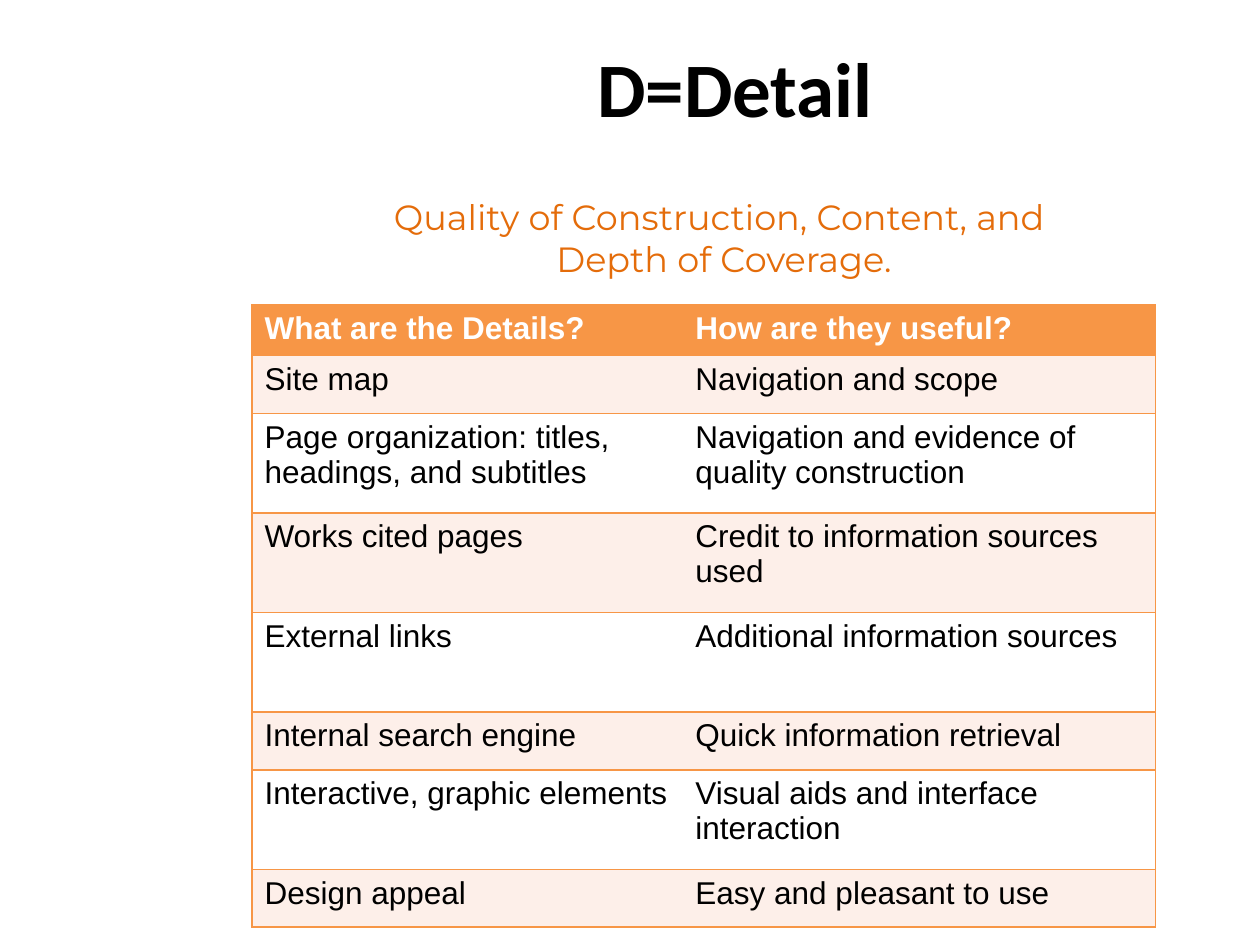
from dataclasses import dataclass

from lxml.etree import SubElement
from pptx import Presentation
from pptx.dml.color import RGBColor
from pptx.enum.text import MSO_ANCHOR, PP_ALIGN
from pptx.oxml.ns import qn
from pptx.util import Inches, Pt


@dataclass(frozen=True)
class Theme:
    black: str = "000000"
    white: str = "FFFFFF"
    orange: str = "F79646"
    dark_orange: str = "E46C0A"
    band: str = "FDEFE9"
    title_size: int = 44
    subtitle_size: int = 20
    table_size: int = 18


THEME = Theme()


def add_run(paragraph, text, font_name, size, color, bold=False):
    run = paragraph.add_run()
    run.text = text
    run.font.name = font_name
    run.font.size = Pt(size)
    run.font.bold = bold
    run.font.color.rgb = RGBColor.from_string(color)


def set_borders(cell, ruled_sides):
    """Rule the given sides (L, R, T, B) and leave the others without a line."""
    properties = cell._tc.get_or_add_tcPr()
    for side in "LRTB":
        border = SubElement(properties, qn(f"a:ln{side}"), w=str(Pt(1)))
        if side in ruled_sides:
            fill = SubElement(border, qn("a:solidFill"))
            SubElement(fill, qn("a:srgbClr"), val=THEME.orange)
        else:
            SubElement(border, qn("a:noFill"))


prs = Presentation()
prs.slide_width, prs.slide_height = Inches(10), Inches(7.5)
slide = prs.slides.add_slide(prs.slide_layouts[6])

# Title
title = slide.shapes.add_textbox(Inches(2.17), Inches(0.25), Inches(7.33), Inches(0.87)).text_frame
title.word_wrap = True
title.vertical_anchor = MSO_ANCHOR.MIDDLE
title.paragraphs[0].alignment = PP_ALIGN.CENTER
add_run(title.paragraphs[0], "D=Detail", "Calibri", THEME.title_size, THEME.black, bold=True)

# Details and their uses
details = [
    ("What are the Details?", "How are they useful?", 0.38),
    ("Site map", "Navigation and scope", 0.46),
    ("Page organization: titles, headings, and subtitles",
     "Navigation and evidence of quality construction", 0.79),
    ("Works cited pages", "Credit to information sources used", 0.79),
    ("External links", "Additional information sources", 0.79),
    ("Internal search engine", "Quick information retrieval", 0.46),
    ("Interactive, graphic elements", "Visual aids and interface interaction", 0.79),
    ("Design appeal", "Easy and pleasant to use", 0.46),
]
table_height = sum(height for *_, height in details)
table = slide.shapes.add_table(
    len(details), 2, Inches(2), Inches(2.42), Inches(7.17), Inches(table_height)).table
table.columns[0].width = Inches(3.42)
table.columns[1].width = Inches(3.75)

for row_index, (*texts, height) in enumerate(details):
    table.rows[row_index].height = Inches(height)
    is_header = row_index == 0
    if is_header:
        row_fill = THEME.orange
    else:
        row_fill = THEME.band if row_index % 2 else THEME.white
    text_color = THEME.white if is_header else THEME.black
    for column_index, text in enumerate(texts):
        cell = table.cell(row_index, column_index)
        set_borders(cell, "TB" + "LR"[column_index])
        cell.fill.solid()
        cell.fill.fore_color.rgb = RGBColor.from_string(row_fill)
        add_run(cell.text_frame.paragraphs[0], text, "Arial",
                THEME.table_size, text_color, bold=is_header)

# Subtitle
subtitle = slide.shapes.add_textbox(Inches(1.92), Inches(1.5), Inches(7.58), Inches(0.77)).text_frame
subtitle.word_wrap = True
for index, line in enumerate(["Quality of Construction, Content, and", " Depth of Coverage."]):
    paragraph = subtitle.add_paragraph() if index else subtitle.paragraphs[0]
    paragraph.alignment = PP_ALIGN.CENTER
    add_run(paragraph, line, "Montserrat", THEME.subtitle_size, THEME.dark_orange)

prs.save("out.pptx")
